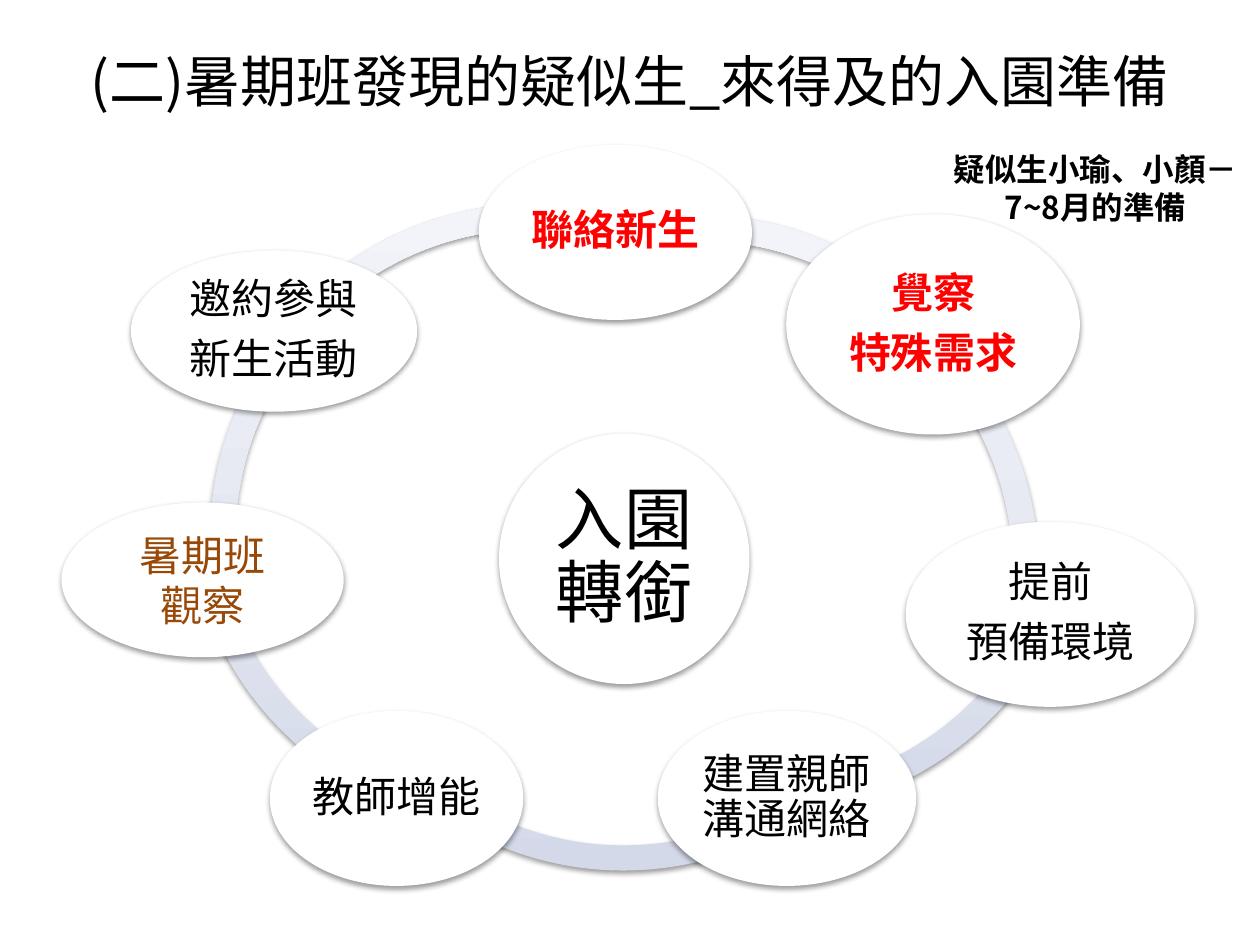
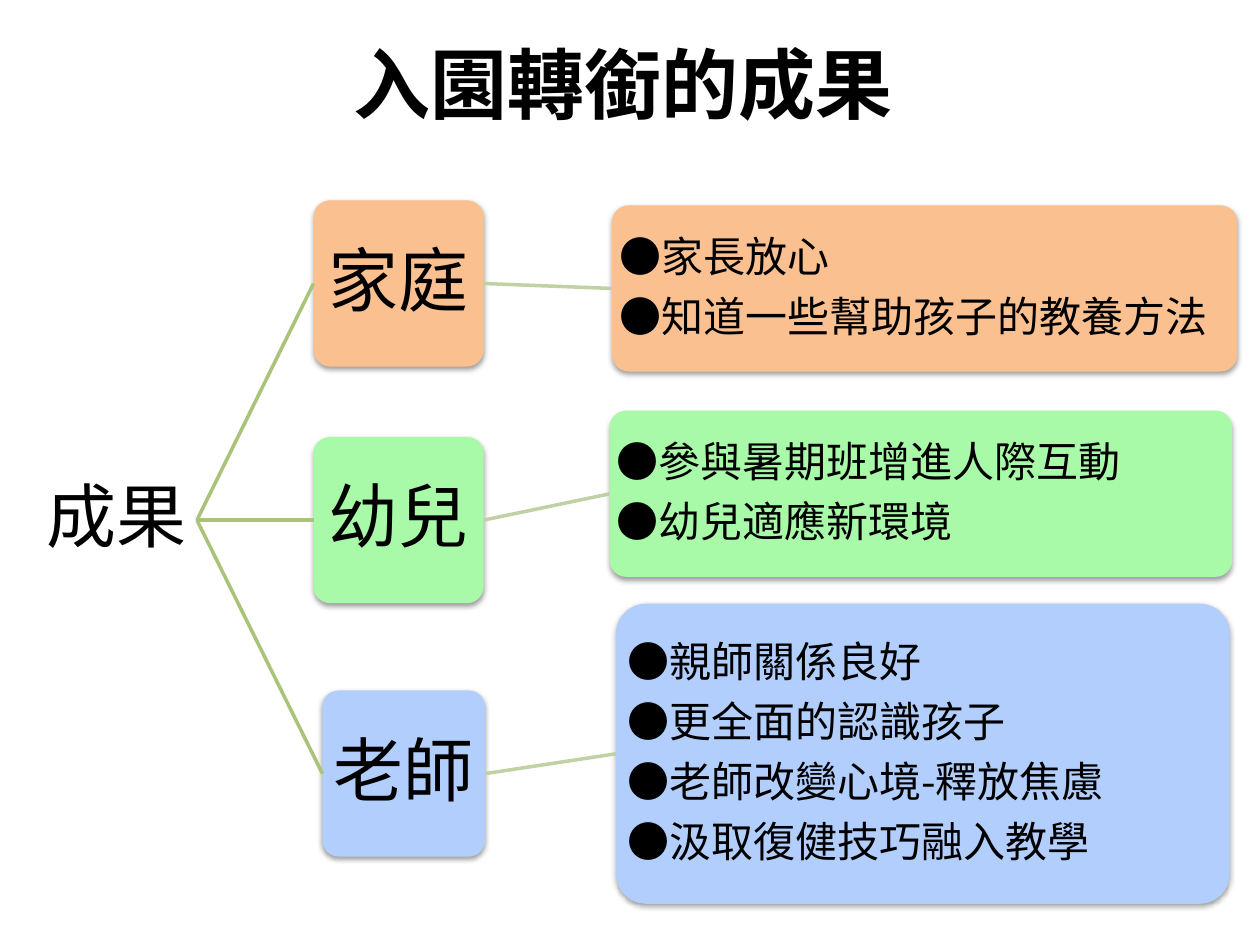
from copy import deepcopy
from lxml.etree import SubElement
from pptx import Presentation
from pptx.dml.color import RGBColor
from pptx.enum.shapes import MSO_CONNECTOR as Link, MSO_SHAPE as Kind
from pptx.enum.text import MSO_ANCHOR as Anchor, PP_ALIGN as Align
from pptx.oxml.ns import qn
from pptx.util import Cm, Pt

# Shared look
SANS, LATIN = "Noto Sans CJK SC", "Calibri"
BLACK, WHITE, RED, BROWN = "000000", "FFFFFF", "FF0000", "984807"
TRUNK, TWIG = "A9C379", "C0D2A4"
FADE = [(0, "D3D9E9"), (0.35, "E0E4EF"), (1, "F2F4F9")]
LEFT, RIGHT = 1, 3  # connection sites

# Ring: left, top, start angle, end angle (clockwise from the right);
# each arc ends behind the two ovals it links
RING = 13.03
ARCS = [
    (4.24, 4.11, 225, 270),
    (4.24, 4.32, 180, 212),
    (3.78, 3.61, 125, 160),
    (6.05, 4.52, 62, 120),
    (8.84, 3.38, 30, 70),
    (7.9, 4.95, 325, 5),
    (7.57, 4.34, 272, 305),
]

# Steps around the ring: box, text, colour, bold
STEPS = [
    ((9.65, 2.92, 5.51, 3.53), "聯絡新生", RED, True),
    ((15.85, 4.32, 5.92, 4.44), "覺察\n特殊需求", RED, True),
    ((18.26, 10.52, 5.82, 3.73), "提前\n預備環境", BLACK, False),
    ((13.26, 14.33, 5.21, 3.53), "建置親師溝通網絡", BLACK, False),
    ((5.44, 14.33, 5.11, 3.53), "教師增能", BLACK, False),
    ((2.64, 5.05, 5.77, 3.25), "邀約參與\n新生活動", BLACK, False),
]

# Branches: colour, name, name box, results, result box
BRANCHES = [
    ("FAC090", "家庭", (6.32, 4.04, 3.43, 3.35),
     "●家長放心\n●知道一些幫助孩子的教養方法", (12.34, 4.14, 12.6, 3.35)),
    ("A8FAA8", "幼兒", (6.32, 8.81, 3.43, 3.35),
     "●參與暑期班增進人際互動\n●幼兒適應新環境", (12.29, 8.28, 12.55, 3.35)),
    ("B1CEFD", "老師", (6.5, 13.92, 3.28, 3.35),
     "●親師關係良好\n●更全面的認識孩子\n●老師改變心境-釋放焦慮\n●汲取復健技巧融入教學",
     (12.42, 12.17, 12.37, 6.05)),
]


def color(code):
    return RGBColor.from_string(code)


def write(shape, text, size, tint=BLACK, bold=False, align=Align.CENTER,
          inset=0.08, tight=True, face=SANS):
    """Fill a shape with text; tight text has 90% lines and a gap after."""
    frame = shape.text_frame
    frame.word_wrap = True
    frame.vertical_anchor = Anchor.MIDDLE
    frame.margin_left = frame.margin_right = Cm(inset)
    frame.margin_top = frame.margin_bottom = Cm(inset)
    frame.text = text
    for para in frame.paragraphs:
        para.alignment = align
        if tight:
            para.line_spacing = 0.9
            para.space_after = Pt(size * 0.35)
        font = para.font
        font.size, font.bold = Pt(size), bold
        font.color.rgb = color(tint)
        font.name = face
        props = para._p.get_or_add_pPr().get_or_add_defRPr()
        SubElement(props, qn("a:ea"), typeface=SANS)


def add_text(slide, box, text, size, **style):
    shape = slide.shapes.add_textbox(*map(Cm, box))
    write(shape, text, size, **style)
    return shape


def add_title(slide, box, text, size, **style):
    return add_text(slide, box, text, size, inset=0.13, tight=False, **style)


def add_form(slide, kind, box, fill=None):
    """Add a borderless shape with a soft shadow below it."""
    shape = slide.shapes.add_shape(kind, *map(Cm, box))
    if fill:
        shape.fill.solid()
        shape.fill.fore_color.rgb = color(fill)
    shape.line.fill.background()
    shape.shadow.inherit = False
    effects = shape._element.spPr.find(qn("a:effectLst"))
    shade = SubElement(effects, qn("a:outerShdw"), blurRad=str(Pt(3.1)),
                       dist=str(Pt(1.6)), dir="5400000", rotWithShape="0")
    tone = SubElement(shade, qn("a:srgbClr"), val=BLACK)
    SubElement(tone, qn("a:alpha"), val="38000")
    return shape


def add_arc(slide, left, top, start, end):
    arc = add_form(slide, Kind.BLOCK_ARC, (left, top, RING, RING))
    # Angles are stored in 1/60000 degree, adjustments in 1/100000
    for i, value in enumerate((start * 0.6, end * 0.6, 0.039)):
        arc.adjustments[i] = value
    arc.fill.gradient()
    arc.fill.gradient_angle = 90
    stops = arc._element.spPr.find(".//" + qn("a:gsLst"))
    stops.insert(1, deepcopy(stops[0]))
    for stop, (place, tint) in zip(arc.fill.gradient_stops, FADE):
        stop.position = place
        stop.color.rgb = color(tint)


def add_oval(slide, box, text, size=24, **style):
    write(add_form(slide, Kind.OVAL, box, WHITE), text, size, **style)


def add_card(slide, box, fill, text, size, **style):
    card = add_form(slide, Kind.ROUNDED_RECTANGLE, box, fill)
    card.adjustments[0] = 0.1
    write(card, text, size, **style)
    return card


def join(slide, start, end, tint):
    line = slide.shapes.add_connector(Link.STRAIGHT, 0, 0, 0, 0)
    line.begin_connect(start, RIGHT)
    line.end_connect(end, LEFT)
    line.line.color.rgb = color(tint)
    line.line.width = Pt(2)
    SubElement(line._element.spPr, qn("a:effectLst"))


def draw_ring(slide):
    add_title(slide, (18.29, 2.87, 7.59, 1.85),
              "疑似生小瑜、小顏－\v7~8月的準備", 18, bold=True)
    for arc in ARCS:
        add_arc(slide, *arc)
    add_oval(slide, (10.06, 8.74, 5.05, 5.05), "入園轉銜", 39, inset=0.13)
    for box, text, tint, bold in STEPS:
        add_oval(slide, box, text, tint=tint, bold=bold)
    add_oval(slide, (1.24, 10.13, 5.69, 3.12), "暑期班\n觀察",
             tint=BROWN, tight=False)
    add_title(slide, (0.3, 0.03, 24.79, 3.18),
              "(二)暑期班發現的疑似生_來得及的入園準備", 32)


def draw_tree(slide):
    add_title(slide, (1.14, 0.08, 22.86, 3.18), "入園轉銜的成果", 44,
              bold=True, face=LATIN)
    root = add_text(slide, (0.71, 8.81, 3.26, 3.35), "成果", 40)
    for fill, name, spot, text, area in BRANCHES:
        node = add_card(slide, spot, fill, name, 40)
        leaf = add_card(slide, area, fill, text, 24,
                        align=Align.LEFT, inset=0.05)
        join(slide, root, node, TRUNK)
        join(slide, node, leaf, TWIG)


def main():
    deck = Presentation()
    deck.slide_width, deck.slide_height = Cm(25.4), Cm(19.05)
    blank = deck.slide_layouts[6]
    for draw in (draw_ring, draw_tree):
        draw(deck.slides.add_slide(blank))
    deck.save("out.pptx")


if __name__ == "__main__":
    main()
